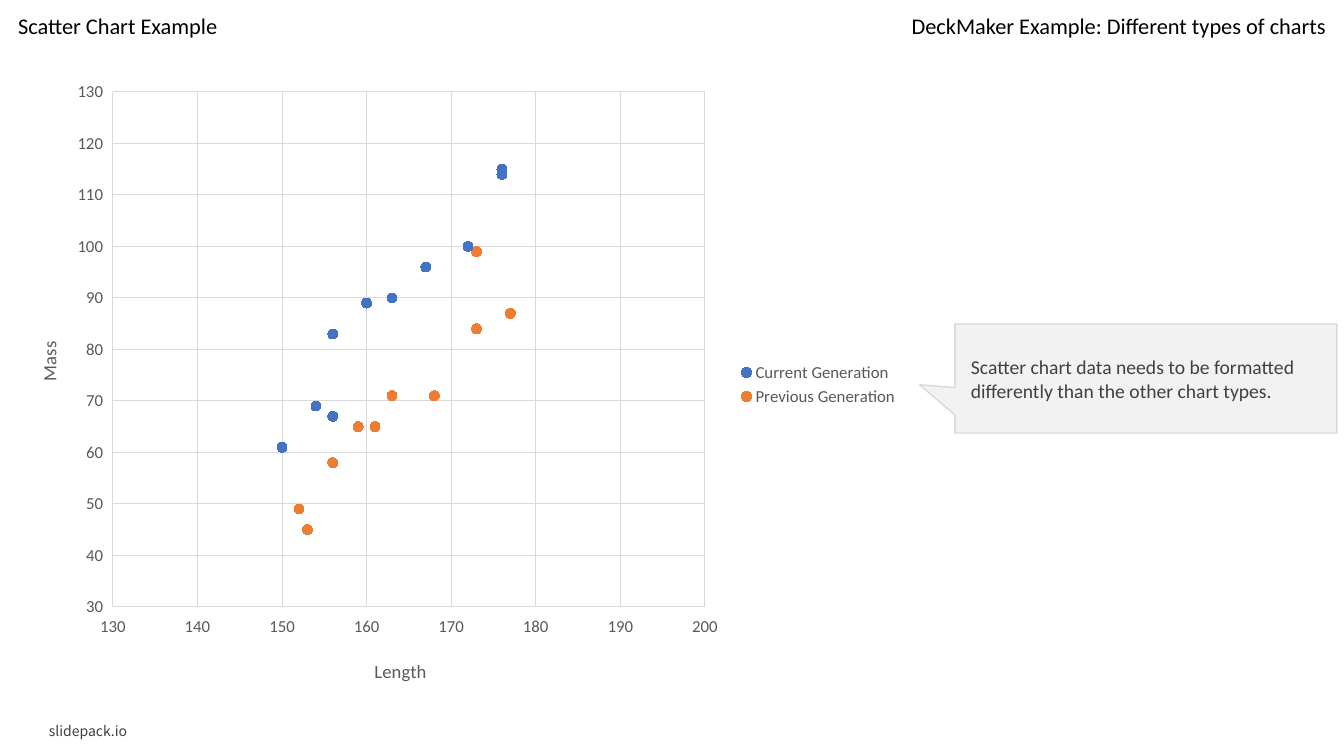
from lxml import etree
from pptx import Presentation
from pptx import util as u
from pptx.chart.data import XyChartData
from pptx.dml.color import RGBColor
from pptx.enum import chart as charts, shapes, text
from pptx.oxml import ns

PX = 914400 / 100.8
PAGE_SIZE = (1344, 756)
CHART_BOX = (8, 69, 901, 631)
PLOT_BOX = (105, 23, 592, 515)
LENGTH_TITLE_BOX = (363, 586)
MASS_TITLE_BOX = (25, 269)

GENERATIONS = {
    "Current Generation": ("4472C4", [
        (150, 61), (156, 67), (154, 69), (156, 83), (160, 89),
        (163, 90), (172, 100), (167, 96), (176, 115), (176, 114)]),
    "Previous Generation": ("ED7D31", [
        (153, 45), (156, 58), (152, 49), (159, 65), (163, 71),
        (161, 65), (168, 71), (173, 84), (177, 87), (173, 99)]),
}


def emu(*lengths):
    return [u.Emu(round(length * PX)) for length in lengths]


def color(code):
    return RGBColor.from_string(code)


def style_font(font, size, code, name="Calibri"):
    font.size, font.name, font.bold = u.Pt(size), name, False
    font.color.rgb = color(code)


def write_text(shape, words, size, code, name="Calibri", wrap=True,
               align=text.PP_ALIGN.LEFT, anchor=text.MSO_ANCHOR.MIDDLE):
    frame = shape.text_frame
    frame.text = words
    frame.word_wrap = wrap
    frame.auto_size = text.MSO_AUTO_SIZE.NONE
    frame.vertical_anchor = anchor
    para = frame.paragraphs[0]
    para.alignment = align
    style_font(para.runs[0].font, size, code, name)


def add_header(page, box):
    """Place the title at the left and the deck name at the right of the box."""
    left, top, width, height = box
    title = page.shapes.title
    title.left, title.top, title.width, title.height = emu(left, top, 223, height)
    deck_name = page.shapes.add_textbox(*emu(left + width - 427, top, 427, height))
    for shape, words, align in (
            (title, "Scatter Chart Example", text.PP_ALIGN.LEFT),
            (deck_name, "DeckMaker Example: Different types of charts",
             text.PP_ALIGN.RIGHT)):
        write_text(shape, words, 16, "000000", wrap=False, align=align,
                   anchor=text.MSO_ANCHOR.TOP)


def set_layout(layout, box, inner=False):
    """Fill a chart layout element with a box measured from the chart's corner."""
    for child in list(layout):
        layout.remove(child)
    manual = etree.SubElement(layout, ns.qn("c:manualLayout"))
    settings = [("layoutTarget", "inner")] if inner else []
    settings += [("xMode", "edge"), ("yMode", "edge")]
    chart_sizes = CHART_BOX[2:] * 2
    settings += [(key, f"{length / size:.4f}")
                 for key, length, size in zip("xywh", box, chart_sizes)]
    for key, value in settings:
        etree.SubElement(manual, ns.qn("c:" + key)).set("val", value)


def layout_of(parent, before):
    """Return the layout of a chart part, made after the named child if missing."""
    layout = parent.find(ns.qn("c:layout"))
    if layout is None:
        layout = etree.Element(ns.qn("c:layout"))
        previous = parent.find(ns.qn(before)) if before else None
        if previous is None:
            parent.insert(0, layout)
        else:
            previous.addnext(layout)
    return layout


def format_axis(axis, name, low, high, title_box, turn):
    axis.minimum_scale, axis.maximum_scale, axis.major_unit = low, high, 10
    axis.has_major_gridlines = True
    grid = axis.major_gridlines.format.line
    grid.color.rgb, grid.width = color("D9D9D9"), u.Pt(0.75)
    axis.format.line.fill.background()
    axis.major_tick_mark = charts.XL_TICK_MARK.OUTSIDE
    axis.minor_tick_mark = charts.XL_TICK_MARK.NONE
    style_font(axis.tick_labels.font, 12, "595959")
    frame = axis.axis_title.text_frame
    frame.text = name
    style_font(frame.paragraphs[0].runs[0].font, 13.3, "595959")
    frame._txBody.bodyPr.set("rot", str(turn * 60000))
    set_layout(layout_of(axis.axis_title._element, "c:tx"), title_box)


def add_scatter(page, box):
    data = XyChartData()
    for name, (_, points) in GENERATIONS.items():
        series = data.add_series(name)
        for length, mass in points:
            series.add_data_point(length, mass)
    chart = page.shapes.add_chart(
        charts.XL_CHART_TYPE.XY_SCATTER, *emu(*box), data).chart
    style_font(chart.font, 10, "000000")
    chart.has_title = False
    chart.has_legend = True
    chart.legend.position = charts.XL_LEGEND_POSITION.RIGHT
    chart.legend.include_in_layout = False
    style_font(chart.legend.font, 12, "595959")
    format_axis(chart.category_axis, "Length", 130, 200, LENGTH_TITLE_BOX, 0)
    format_axis(chart.value_axis, "Mass", 30, 130, MASS_TITLE_BOX, -90)
    plot = chart.plots[0]
    plot.vary_by_categories = False
    for series, (code, _) in zip(plot.series, GENERATIONS.values()):
        series.smooth = False
        series.format.line.fill.background()
        marker = series.marker
        marker.style, marker.size = charts.XL_MARKER_STYLE.CIRCLE, 7
        marker.format.fill.solid()
        marker.format.fill.fore_color.rgb = color(code)
        marker.format.line.color.rgb = color(code)
    plot_area = chart._chartSpace.chart.plotArea
    set_layout(layout_of(plot_area, None), PLOT_BOX, inner=True)


def add_callout(page, box):
    callout = page.shapes.add_shape(
        shapes.MSO_SHAPE.RECTANGULAR_CALLOUT, *emu(*box))
    callout.adjustments[0], callout.adjustments[1] = -0.593, 0.057
    callout.shadow.inherit = False
    callout.fill.solid()
    callout.fill.fore_color.rgb = color("F2F2F2")
    callout.line.color.rgb, callout.line.width = color("D9D9D9"), u.Pt(1)
    frame = callout.text_frame
    frame.margin_left, frame.margin_top, frame.margin_right, frame.margin_bottom = \
        emu(16, 16, 16, 16)
    write_text(callout, "Scatter chart data needs to be formatted differently "
               "than the other chart types.", 14, "404040")


def add_footer(page, box):
    footer = page.shapes.add_textbox(*emu(*box))
    write_text(footer, "slidepack.io", 10, "404040", "Noto Sans CJK JP")


def main():
    deck = Presentation()
    deck.slide_width, deck.slide_height = emu(*PAGE_SIZE)
    page = deck.slides.add_slide(deck.slide_layouts.get_by_name("Title Only"))
    add_header(page, (8, 7, 1328, 37))
    add_scatter(page, CHART_BOX)
    add_callout(page, (955, 324, 382, 109))
    add_footer(page, (39, 718, 293, 25))
    deck.save("out.pptx")


if __name__ == "__main__":
    main()
